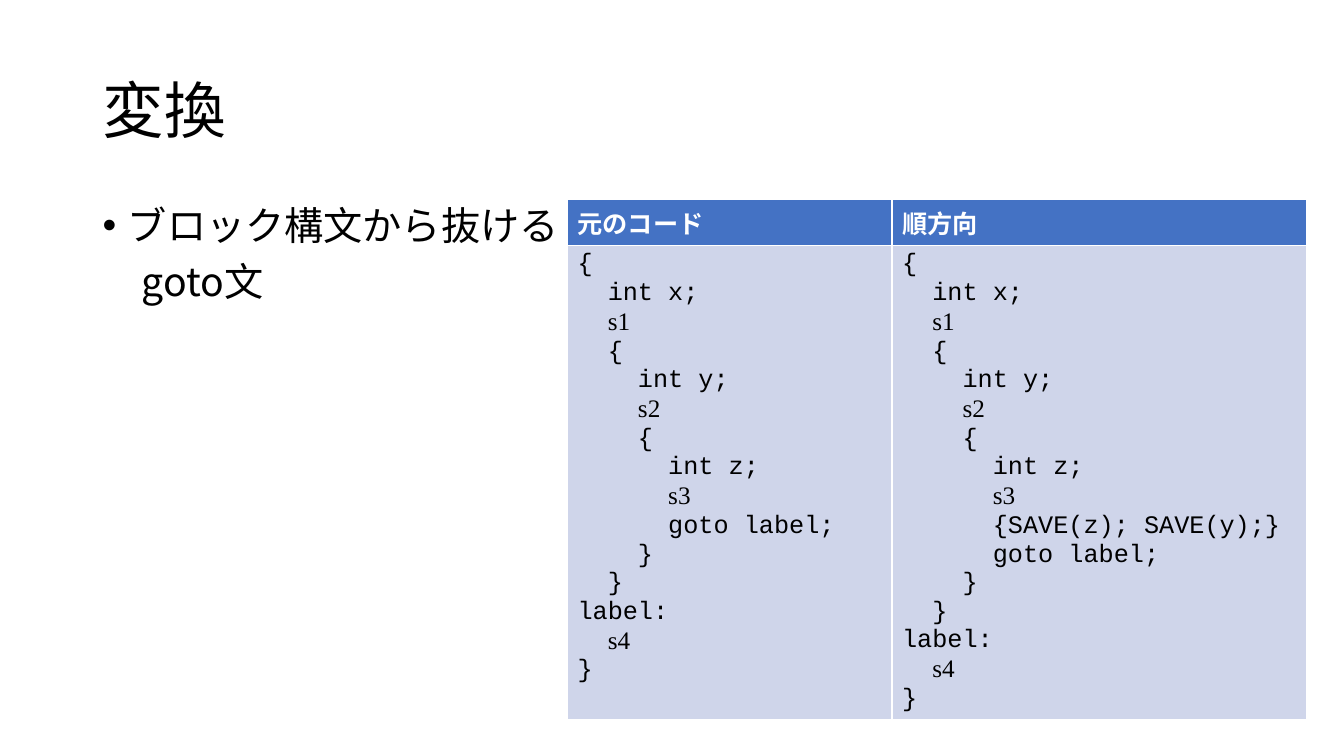
from pptx import Presentation
from pptx.dml.color import RGBColor
from pptx.enum.text import MSO_ANCHOR, PP_ALIGN
from pptx.oxml.ns import qn
from pptx.util import Cm, Pt
from lxml import etree

LEFT = PP_ALIGN.LEFT
TOP, MIDDLE = MSO_ANCHOR.TOP, MSO_ANCHOR.MIDDLE
COLORS = {"text": "000000", "header_text": "FFFFFF", "header": "4472C4", "body": "CFD5EA"}
SANS, MONO, SERIF = "Noto Sans CJK JP", "Courier New", "Times New Roman"
STATEMENTS = ("s1", "s2", "s3", "s4")


def add_text(p, text, size=18, font=SANS, color="text", bold=False):
    r = p.add_run()
    r.text = text
    r.font.size = Pt(size)
    r.font.name = font
    r.font.bold = bold
    r.font.color.rgb = RGBColor.from_string(COLORS[color])
    etree.SubElement(r.font._element, qn("a:ea")).set("typeface", font)


prs = Presentation()
prs.slide_width, prs.slide_height = Cm(33.87), Cm(19.05)
s = prs.slides.add_slide(prs.slide_layouts[1])

title = s.shapes.title
title.left, title.top, title.width, title.height = Cm(2.33), Cm(1.01), Cm(29.21), Cm(3.68)
title.text_frame.vertical_anchor = MIDDLE
p = title.text_frame.paragraphs[0]
p.alignment = LEFT
p.line_spacing = 0.9
add_text(p, "変換", size=44)

body = s.placeholders[1]
body.left, body.top, body.width, body.height = Cm(2.33), Cm(5.07), Cm(29.21), Cm(12.09)
tf = body.text_frame
tf.vertical_anchor = TOP
bullet_lines = [("ブロック構文から抜ける", 0.64, "•"), ("\u3000goto文", 0, None)]
for i, (text, indent, bullet) in enumerate(bullet_lines):
    p = tf.add_paragraph() if i else tf.paragraphs[0]
    p.line_spacing = 0.9
    p.space_before = Pt(10)
    add_text(p, text, size=28)
    pPr = p._p.get_or_add_pPr()
    pPr.set("marL", str(Cm(indent)))
    pPr.set("indent", str(-Cm(indent)))
    if bullet:
        etree.SubElement(pPr, qn("a:buFont")).set("typeface", "Arial")
        etree.SubElement(pPr, qn("a:buChar")).set("char", bullet)
    else:
        etree.SubElement(pPr, qn("a:buNone"))

source_code = """{
  int x;
  s1
  {
    int y;
    s2
    {
      int z;
      s3
      goto label;
    }
  }
label:
  s4
}"""
forward_code = source_code.replace("goto", "{SAVE(z); SAVE(y);}\n      goto")
columns = [("元のコード", source_code, 8.18), ("順方向", forward_code, 10.44)]

table = s.shapes.add_table(2, 2, Cm(14.3), Cm(5.02), Cm(18.62), Cm(13.04)).table
table.rows[0].height, table.rows[1].height = Cm(1.14), Cm(11.9)
for i, (heading, code, width) in enumerate(columns):
    table.columns[i].width = Cm(width)
    for row, fill in enumerate(("header", "body")):
        cell = table.cell(row, i)
        cell.fill.solid()
        cell.fill.fore_color.rgb = RGBColor.from_string(COLORS[fill])
    add_text(table.cell(0, i).text_frame.paragraphs[0], heading, color="header_text", bold=True)
    tf = table.cell(1, i).text_frame
    for n, line in enumerate(code.split("\n")):
        p = tf.add_paragraph() if n else tf.paragraphs[0]
        word = line.strip()
        if word in STATEMENTS:
            add_text(p, line[:-len(word)], font=MONO)
            add_text(p, word, font=SERIF)
        else:
            add_text(p, line, font=MONO)

prs.save("out.pptx")
